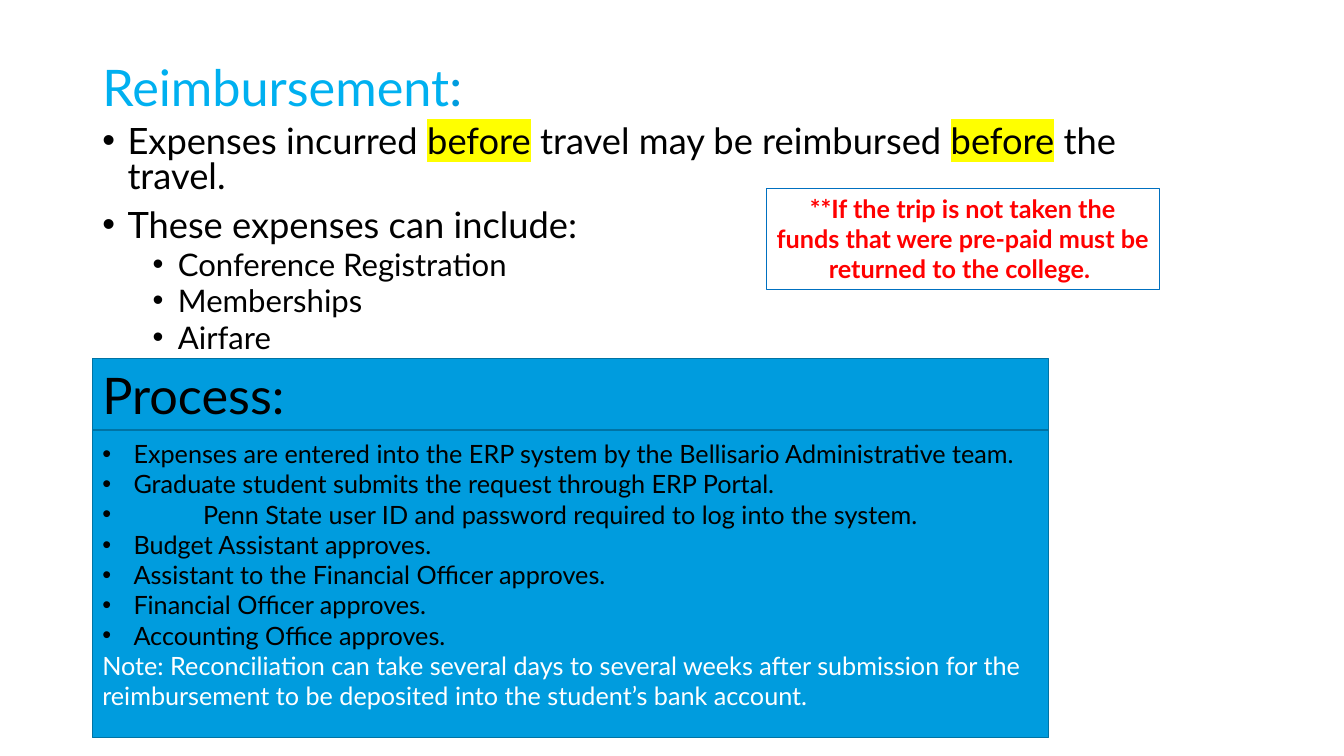
"""Build the reimbursement slide: expenses, refund warning and approval process."""
from lxml import etree
from pptx import Presentation
from pptx import util as u
from pptx.dml.color import RGBColor
from pptx.enum import shapes, text
from pptx.oxml.ns import qn

prs = Presentation()
prs.slide_width, prs.slide_height = u.Inches(13.33), u.Inches(7.5)
s = prs.slides.add_slide(prs.slide_layouts[6])
COL, ROW = prs.slide_width / 160, prs.slide_height / 90
LEFT, PANEL = 11, 113.85
BLACK, BLUE, EDGE = "000000", "009CDE", "0073A4"
TOP, MIDDLE = text.MSO_ANCHOR.TOP, text.MSO_ANCHOR.MIDDLE


def rgb(value):
    return RGBColor.from_string(value)


def write(p, pieces, size, color, bold=None, indent=None, **layout):
    if indent:
        margin, hang = indent
        pPr = p._p.get_or_add_pPr()
        pPr.set("marL", str(u.Inches(margin)))
        pPr.set("indent", str(u.Inches(-hang)))
        etree.SubElement(pPr, qn("a:buFont")).set("typeface", "Arial")
        etree.SubElement(pPr, qn("a:buChar")).set("char", "•")
    for key, value in layout.items():
        setattr(p, key, value)
    for piece, mark in pieces:
        r = p.add_run()
        r.text = piece
        for key, value in {"name": "Lato", "size": u.Pt(size), "bold": bold}.items():
            setattr(r.font, key, value)
        r.font.color.rgb = rgb(mark.get("color", color))
        if "size" in mark:
            r.font.size = u.Pt(mark["size"])
        if "highlight" in mark:
            hl = etree.Element(qn("a:highlight"))
            etree.SubElement(hl, qn("a:srgbClr")).set("val", mark["highlight"])
            r._r.rPr.find(qn("a:solidFill")).addnext(hl)


frames = {}
for name, x, y, w, h, fill, line, weight, anchor in [
    ("title", LEFT, 4.8, 138, 11.6, None, None, 0, MIDDLE),
    ("expenses", LEFT, 14.5, 124, 30.5, None, None, 0, TOP),
    ("steps", LEFT, 49, PANEL, 38.8, BLUE, EDGE, 1, MIDDLE),
    ("process", LEFT, 42.7, PANEL, 8.5, BLUE, EDGE, 1, TOP),
    ("warning", 91.2, 22.4, 46.8, 12.1, None, "0070C0", 0.75, TOP),
]:
    at = [int(v) for v in (x * COL, y * ROW, w * COL, h * ROW)]
    if line:
        sp = s.shapes.add_shape(shapes.MSO_SHAPE.RECTANGLE, *at)
        sp.shadow.inherit = False
        sp.line.color.rgb, sp.line.width = rgb(line), u.Pt(weight)
        if fill:
            sp.fill.solid()
            sp.fill.fore_color.rgb = rgb(fill)
        else:
            sp.fill.background()
    else:
        sp = s.shapes.add_textbox(*at)
    tf = frames[name] = sp.text_frame
    tf.word_wrap, tf.vertical_anchor = True, anchor
    tf.paragraphs[0].alignment = text.PP_ALIGN.LEFT

write(frames["title"].paragraphs[0],
      [("Reimbursement", {}), (":", {"size": 38, "color": BLUE})],
      36, "00B0F0", line_spacing=0.9)
write(frames["process"].paragraphs[0], [("Process:", {})], 36, BLACK)
write(frames["warning"].paragraphs[0],
      [("**If the trip is not taken the funds that were pre-paid must be "
        "returned to the college. ", {})],
      18, "FF0000", bold=True, alignment=text.PP_ALIGN.CENTER)

before = ("before", {"highlight": "FFFF00"})
expenses = [
    (0, [("Expenses incurred ", {}), before, (" travel may be reimbursed ", {}),
         before, (" the travel.", {})]),
    (0, [("These expenses can include:", {})]),
]
expenses += [(1, [(item, {})])
             for item in ("Conference Registration", "Memberships", "Airfare")]
tf = frames["expenses"]
for i, (level, pieces) in enumerate(expenses):
    p = tf.add_paragraph() if i else tf.paragraphs[0]
    write(p, pieces, (25.9, 22.2)[level], BLACK, indent=(0.25 + level / 2, 0.25),
          level=level, line_spacing=0.8, space_before=u.Pt((10, 5)[level] if i else 0))

NEAR, FAR = 0.31, 1
steps = [
    (NEAR, "Expenses are entered into the ERP system by the Bellisario Administrative team."),
    (NEAR, "Graduate student submits the request through ERP Portal."),
    (FAR, "Penn State user ID and password required to log into the system."),
    (NEAR, "Budget Assistant approves."),
    (NEAR, "Assistant to the Financial Officer approves."),
    (NEAR, "Financial Officer approves."),
    (NEAR, "Accounting Office approves."),
]
tf = frames["steps"]
for i, (margin, step) in enumerate(steps):
    p = tf.add_paragraph() if i else tf.paragraphs[0]
    write(p, [(step, {})], 18, BLACK, indent=(margin, margin),
          alignment=text.PP_ALIGN.LEFT)
write(tf.add_paragraph(),
      [("Note: Reconciliation can take several days to several weeks after submission "
        "for the reimbursement to be deposited into the student’s bank account.", {})],
      18, "FFFFFF", alignment=text.PP_ALIGN.LEFT)

prs.save("out.pptx")
